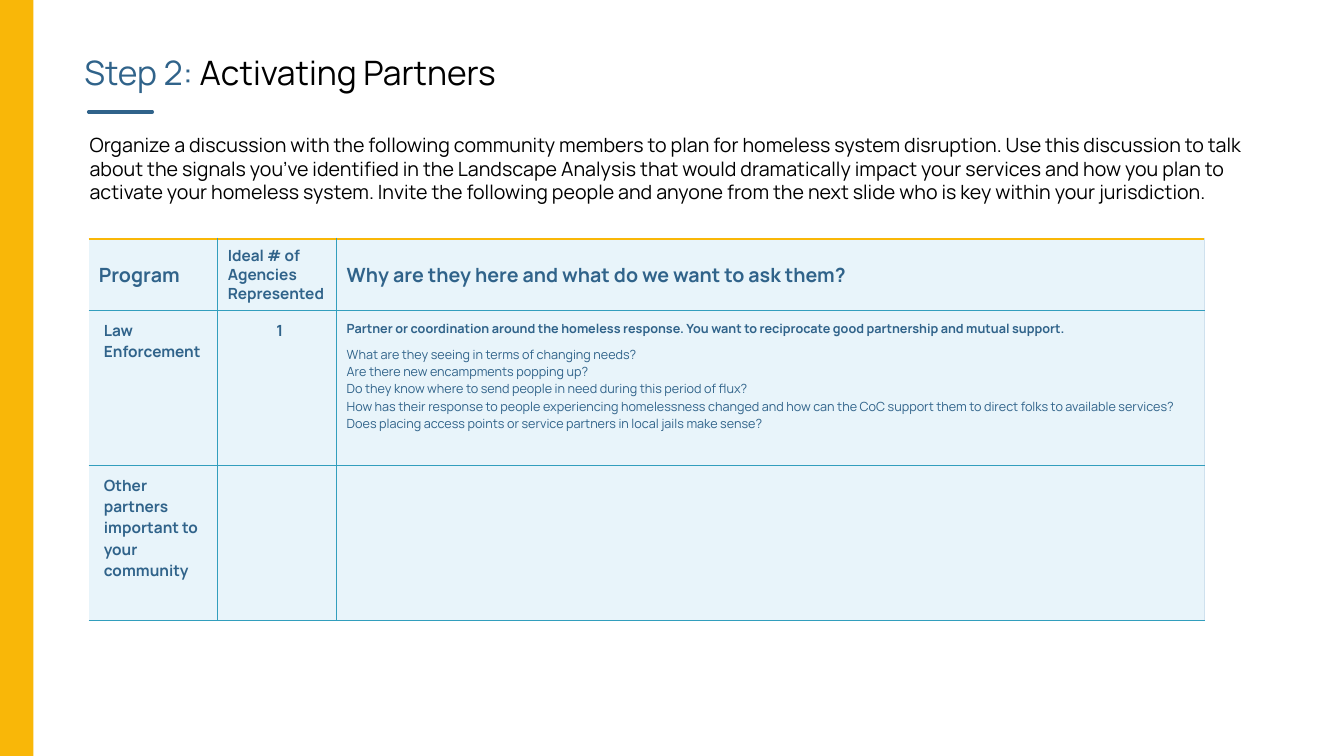
from lxml import etree
from pptx import Presentation
from pptx.dml.color import RGBColor
from pptx.enum.shapes import MSO_CONNECTOR, MSO_SHAPE
from pptx.enum.text import MSO_ANCHOR, PP_ALIGN
from pptx.oxml.ns import qn
from pptx.util import Inches, Pt

RECT, STRAIGHT = MSO_SHAPE.RECTANGLE, MSO_CONNECTOR.STRAIGHT
TOP, MIDDLE = MSO_ANCHOR.TOP, MSO_ANCHOR.MIDDLE
LEFT, CENTER = PP_ALIGN.LEFT, PP_ALIGN.CENTER

FONT = "Manrope"
BLUE, BLACK, GOLD = "30638A", "000000", "F9B708"
PALE, TEAL, MIST = "E8F4FA", "329EBD", "CFE1EE"


def rgb(value):
    return RGBColor.from_string(value)


class SlideBuilder:
    """Places styled elements; positions are percentages of the slide's size."""

    def __init__(self, prs):
        self.width, self.height = prs.slide_width, prs.slide_height
        self.slide = prs.slides.add_slide(prs.slide_layouts[6])

    def x(self, share):
        return int(self.width * share / 100)

    def y(self, share):
        return int(self.height * share / 100)

    def box(self, left, top, width, height):
        return self.x(left), self.y(top), self.x(width), self.y(height)

    def style(self, r, size, color=BLUE, bold=False):
        r.font.name, r.font.size, r.font.bold = FONT, Pt(size), bold
        r.font.color.rgb = rgb(color)

    def text(self, place, runs, size):
        tf = self.slide.shapes.add_textbox(*self.box(*place)).text_frame
        tf.word_wrap = True
        for words, color in runs:
            r = tf.paragraphs[0].add_run()
            r.text = words
            self.style(r, size, color)

    def bar(self, place, color):
        sp = self.slide.shapes.add_shape(RECT, *self.box(*place))
        sp.shadow.inherit = False
        sp.fill.solid()
        sp.fill.fore_color.rgb = rgb(color)
        sp.line.fill.background()

    def rule(self, left, right, top, color, weight):
        line = self.slide.shapes.add_connector(
            STRAIGHT, self.x(left), self.y(top), self.x(right), self.y(top))
        line.line.color.rgb = rgb(color)
        line.line.width = Pt(weight)
        line.line._get_or_add_ln().set("cap", "rnd")
        etree.SubElement(line._element.spPr, qn("a:effectLst"))

    def table(self, left, top, columns, rows):
        frame = self.slide.shapes.add_table(
            len(rows), len(columns), *self.box(left, top, sum(columns), sum(rows)))
        table = frame.table
        table.first_row = table.horz_banding = False
        for column, share in zip(table.columns, columns):
            column.width = self.x(share)
        for row, share in zip(table.rows, rows):
            row.height = self.y(share)
        return table

    def borders(self, cell, **edges):
        """Each edge is (colour, points), or None for no line."""
        props = cell._tc.get_or_add_tcPr()
        for index, (edge, line) in enumerate(edges.items()):
            ln = etree.Element(qn(f"a:ln{edge}"))
            if line:
                ln.set("w", str(Pt(line[1])))
                fill = etree.SubElement(ln, qn("a:solidFill"))
                etree.SubElement(fill, qn("a:srgbClr")).set("val", line[0])
            else:
                etree.SubElement(ln, qn("a:noFill"))
            props.insert(index, ln)

    def cell(self, cell, lines, size, bold=True, anchor=TOP, align=LEFT,
             insets=(0.1, 0.05, 0.1, 0.05), indent=0, spacing=1):
        cell.fill.solid()
        cell.fill.fore_color.rgb = rgb(PALE)
        cell.vertical_anchor = anchor
        (cell.margin_left, cell.margin_top,
         cell.margin_right, cell.margin_bottom) = map(Inches, insets)
        tf = cell.text_frame
        tf.text = "\n".join(lines)
        for p in tf.paragraphs:
            p.alignment, p.line_spacing = align, spacing
            if indent:
                p._p.get_or_add_pPr().set("marL", str(Inches(indent)))
            for r in p.runs:
                self.style(r, size, bold=bold)


HEADERS = [
    ("Program", dict(size=14)),
    ("Ideal # of Agencies Represented", dict(size=11, spacing=0.9)),
    ("Why are they here and what do we want to ask them?",
     dict(size=14, insets=(0.1, 0.1, 0.1, 0.1))),
]
PARTNERS = [
    ("Law Enforcement", "1", [
        "Partner or coordination around the homeless response. "
        "You want to reciprocate good partnership and mutual support.",
        "What are they seeing in terms of changing needs?",
        "Are there new encampments popping up?",
        "Do they know where to send people in need during this period of flux?",
        "How has their response to people experiencing homelessness changed and "
        "how can the CoC support them to direct folks to available services? "
        "Does placing access points or service partners in local jails make sense?",
    ]),
    ("Other partners important to your community", "", []),
]
INTRO = (
    "Organize a discussion with the following community members to plan for "
    "homeless system disruption. Use this discussion to talk about the signals "
    "you’ve identified in the Landscape Analysis that would dramatically impact "
    "your services and how you plan to activate your homeless system. Invite the "
    "following people and anyone from the next slide who is key within your "
    "jurisdiction.")


def main():
    prs = Presentation()
    prs.slide_width, prs.slide_height = Inches(13.33), Inches(7.5)
    s = SlideBuilder(prs)

    # Title, introduction and accents
    s.text((5.55, 6.27, 92.87, 8.53),
           [("Step 2: ", BLUE), ("Activating Partners", BLACK)], 24)
    s.text((5.93, 16.93, 89.2, 12.4), [(INTRO, BLACK)], 14)
    s.rule(6.6, 11.33, 14.8, BLUE, 2.5)
    s.bar((0, 0, 2.48, 100), GOLD)

    # Partner table
    table = s.table(6.6, 31.6, [9.6, 8.85, 64.55], [9.4, 20.5, 20.5])
    for column, (words, look) in enumerate(HEADERS):
        s.cell(table.cell(0, column), [words], anchor=MIDDLE, **look)
    label = dict(size=11, insets=(0, 0.1, 0.1, 0.05), indent=0.15)
    for row, (partner, count, questions) in enumerate(PARTNERS, start=1):
        s.cell(table.cell(row, 0), [partner], **label)
        s.cell(table.cell(row, 1), [count], align=CENTER, **label)
        reasons = table.cell(row, 2)
        s.cell(reasons, questions, 9, bold=False, insets=(0.1, 0.1, 0, 0.1))
        if questions:
            purpose = reasons.text_frame.paragraphs[0]
            purpose.space_after = Pt(6)
            purpose.runs[0].font.bold = True

    # Cell borders: gold on top, pale on the right, open on the left
    thin, last = (TEAL, 0.5), len(HEADERS) - 1
    for row in range(len(PARTNERS) + 1):
        for column in range(len(HEADERS)):
            s.borders(table.cell(row, column),
                      L=thin if column else None,
                      R=(MIST, 0.5) if column == last else thin,
                      T=thin if row else (GOLD, 2.25),
                      B=thin)

    prs.save("out.pptx")


if __name__ == "__main__":
    main()
